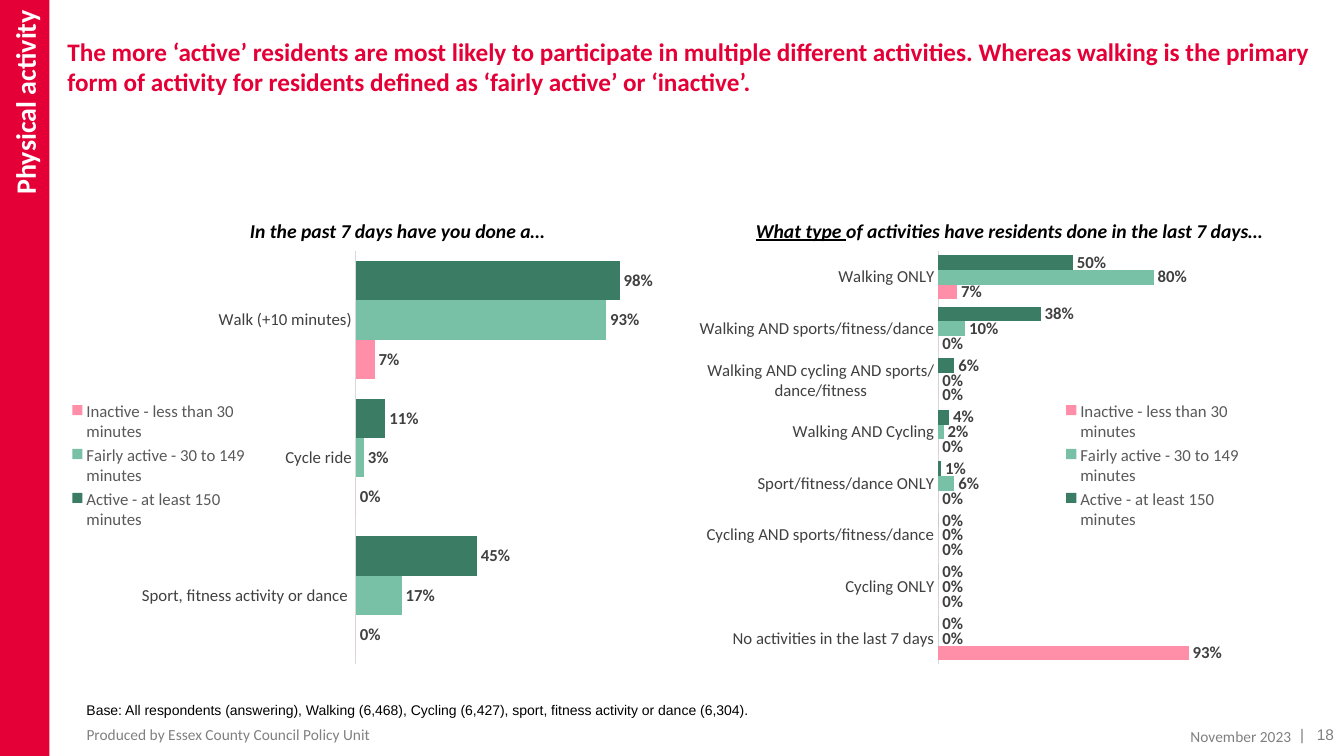
from lxml.etree import SubElement
from pptx import Presentation
from pptx.chart.data import CategoryChartData
from pptx.dml.color import RGBColor
from pptx.enum.chart import (XL_CHART_TYPE, XL_LABEL_POSITION as LabelPosition,
                             XL_LEGEND_POSITION as LegendPosition, XL_TICK_LABEL_POSITION as TickLabels,
                             XL_TICK_MARK as TickMark)
from pptx.enum.shapes import MSO_SHAPE
from pptx.enum.text import MSO_ANCHOR as Anchor, PP_ALIGN as Align
from pptx.oxml.ns import qn
from pptx.util import Pt

RED = RGBColor(0xE4, 0x00, 0x37)
DARK_GREEN = RGBColor(0x3A, 0x7D, 0x64)
LIGHT_GREEN = RGBColor(0x78, 0xC0, 0xA6)
PINK = RGBColor(0xFF, 0x8E, 0xA9)
BLACK = RGBColor(0x00, 0x00, 0x00)
WHITE = RGBColor(0xFF, 0xFF, 0xFF)
CHARCOAL = RGBColor(0x40, 0x40, 0x40)
LEGEND_GREY = RGBColor(0x59, 0x59, 0x59)
FOOTER_GREY = RGBColor(0x80, 0x80, 0x80)
AXIS_GREY = RGBColor(0xD9, 0xD9, 0xD9)

ACTIVITY_LEVELS = [
    ("Active - at least 150 minutes", DARK_GREEN),
    ("Fairly active - 30 to 149 minutes", LIGHT_GREEN),
    ("Inactive - less than 30 minutes", PINK),
]
ACTIVITY_DONE = {
    "Walk (+10 minutes)": (0.98, 0.93, 0.07),
    "Cycle ride": (0.11, 0.03, 0),
    "Sport, fitness activity or dance ": (0.45, 0.17, 0),
}
ACTIVITY_TYPES = {
    "Walking ONLY": (0.5, 0.8, 0.07),
    "Walking AND sports/fitness/dance": (0.38, 0.1, 0),
    "Walking AND cycling AND sports/dance/fitness": (0.06, 0, 0),
    "Walking AND Cycling": (0.04, 0.02, 0),
    "Sport/fitness/dance ONLY": (0.01, 0.06, 0),
    "Cycling AND sports/fitness/dance": (0, 0, 0),
    "Cycling ONLY": (0, 0, 0),
    "No activities in the last 7 days": (0, 0, 0.93),
}
PLOT_LAYOUT = {"layoutTarget": "inner", "xMode": "edge", "yMode": "edge",
               "x": "0.486", "y": "0.008", "w": "0.484", "h": "0.948"}


class SlideBuilder:
    """Draws text, panels and bar charts on one slide in a shared style."""

    def __init__(self, slide, font="Calibri"):
        self.slide = slide
        self.font = font

    def style(self, font, size, color, bold=None, italic=None, name=None):
        font.name = name or self.font
        font.size = Pt(size)
        font.color.rgb = color
        font.bold = bold
        font.italic = italic

    def text(self, box, runs, size, color, bold=None, italic=None, name=None,
             align=Align.LEFT, anchor=Anchor.TOP, margins=(7.2, 3.6), before=0):
        shape = self.slide.shapes.add_textbox(*map(Pt, box))
        frame = shape.text_frame
        frame.word_wrap = True
        frame.vertical_anchor = anchor
        frame.margin_left = frame.margin_right = Pt(margins[0])
        frame.margin_top = frame.margin_bottom = Pt(margins[1])
        paragraph = frame.paragraphs[0]
        paragraph.alignment = align
        paragraph.space_before = Pt(before)
        for words in runs:
            run = paragraph.add_run()
            run.text = words
            self.style(run.font, size, color, bold, italic, name)
        return paragraph

    def heading(self, left, width, *runs):
        return self.text((left, 152.6, width, 24.5), runs, 14, BLACK,
                         bold=True, italic=True, before=6)

    def footer(self, box, *runs, align=Align.LEFT, name=None):
        return self.text(box, runs, 11, FOOTER_GREY, align=align, anchor=Anchor.MIDDLE, name=name)

    def side_panel(self, box, words):
        shape = self.slide.shapes.add_shape(MSO_SHAPE.RECTANGLE, *map(Pt, box))
        shape.shadow.inherit = False
        shape.fill.solid()
        shape.fill.fore_color.rgb = RED
        shape.line.fill.background()
        frame = shape.text_frame
        frame.text = words
        frame.vertical_anchor = Anchor.MIDDLE
        frame.margin_top = Pt(7.2)
        shape.element.txBody.bodyPr.set("vert", "vert270")
        paragraph = frame.paragraphs[0]
        paragraph.alignment = Align.RIGHT
        self.style(paragraph.runs[0].font, 20, WHITE, bold=True)

    def bar_chart(self, left, shares, legend_side):
        data = CategoryChartData(number_format="0%")
        data.categories = list(shares)
        for (level, _), values in zip(ACTIVITY_LEVELS, zip(*shares.values())):
            data.add_series(level, values)
        chart = self.slide.shapes.add_chart(
            XL_CHART_TYPE.BAR_CLUSTERED, Pt(left), Pt(177.1), Pt(437), Pt(311), data).chart
        self.style(chart.font, 10, BLACK)
        chart.has_title = False
        chart.has_legend = True
        chart.legend.position = legend_side
        chart.legend.include_in_layout = False
        self.style(chart.legend.font, 12, LEGEND_GREY)
        self.axes(chart)
        plot = chart.plots[0]
        plot.gap_width = 50
        plot.overlap = 0
        plot.vary_by_categories = False
        for series, (_, color) in zip(plot.series, ACTIVITY_LEVELS):
            series.format.fill.solid()
            series.format.fill.fore_color.rgb = color
            series.invert_if_negative = False
            labels = series.data_labels
            labels.show_value = True
            labels.position = LabelPosition.OUTSIDE_END
            labels.number_format = "0%"
            labels.number_format_is_linked = False
            self.style(labels.font, 12, CHARCOAL, bold=True)
        self.place_plot(chart)

    def axes(self, chart):
        category_axis = chart.category_axis
        category_axis.reverse_order = True
        category_axis.major_tick_mark = TickMark.NONE
        category_axis.tick_label_position = TickLabels.NEXT_TO_AXIS
        category_axis.format.line.color.rgb = AXIS_GREY
        category_axis.format.line.width = Pt(0.75)
        self.style(category_axis.tick_labels.font, 12, CHARCOAL)
        value_axis = chart.value_axis
        value_axis.minimum_scale = 0
        value_axis.maximum_scale = 1.1
        value_axis.has_major_gridlines = False
        value_axis.visible = False

    def place_plot(self, chart):
        area = chart.element.find(".//" + qn("c:plotArea"))
        for layout in area.findall(qn("c:layout")):
            area.remove(layout)
        layout = SubElement(area, qn("c:layout"))
        area.insert(0, layout)
        manual = SubElement(layout, qn("c:manualLayout"))
        for tag, value in PLOT_LAYOUT.items():
            SubElement(manual, qn("c:" + tag)).set("val", value)


def main():
    presentation = Presentation()
    presentation.slide_width, presentation.slide_height = Pt(960), Pt(540)
    builder = SlideBuilder(presentation.slides.add_slide(presentation.slide_layouts[6]))

    builder.bar_chart(41.8, ACTIVITY_DONE, LegendPosition.LEFT)
    builder.text((48.2, 25.9, 902.2, 83.5), [
        "The more ‘active’ residents are most likely to participate in multiple different activities. "
        "Whereas walking is the primary form of activity for residents defined as "
        "‘fairly active’ or ‘inactive’."], 18, RED, bold=True, margins=(0, 0))
    page_number = builder.footer((898.6, 519.1, 61.4, 10.8), "|", " ", "18",
                                 align=Align.RIGHT, name="Arial")
    page_number.runs[1].font._element.set("spc", "610")
    builder.footer((54.7, 519.1, 464, 10.8), "Produced by Essex County Council Policy Unit")
    builder.footer((756.7, 520.6, 172.8, 10.8), "November 2023", align=Align.RIGHT)
    builder.side_panel((0, 0, 35.3, 540), "Physical activity")
    builder.bar_chart(457.9, ACTIVITY_TYPES, LegendPosition.RIGHT)
    types_heading = builder.heading(532.8, 382.3, "What type ",
                                    "of activities have residents done in the last 7 days…")
    types_heading.runs[0].font.underline = True
    builder.heading(171.4, 327.6, "In the past 7 days have you done a…")
    builder.text((54.7, 497.5, 578.2, 19.4), [
        "Base: All respondents (answering), Walking (6,468), Cycling (6,427), "
        "sport, fitness activity or dance (6,304)."], 10, BLACK, name="Arial")
    presentation.save("out.pptx")


if __name__ == "__main__":
    main()
